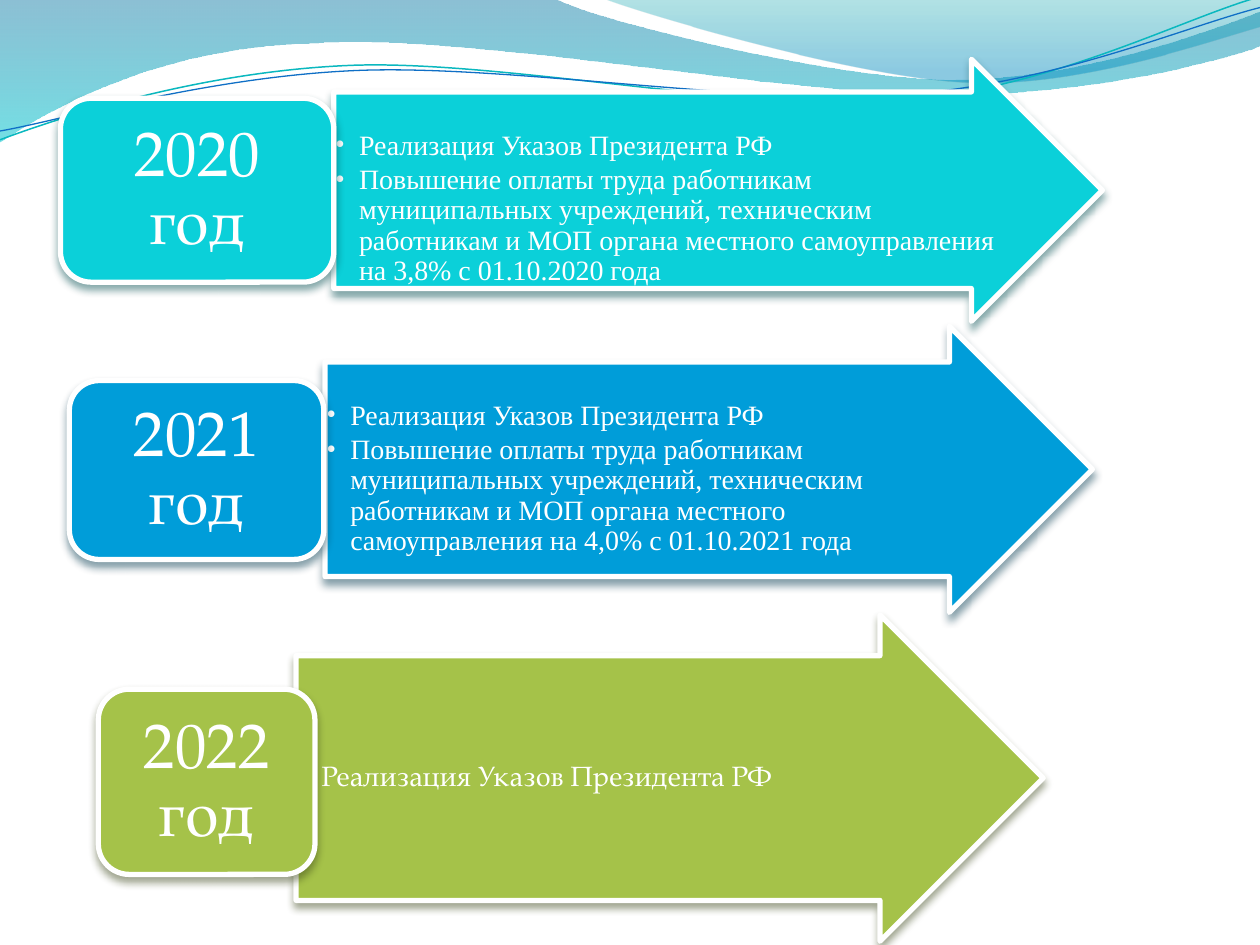
"""Build a slide with three yearly arrows under a wave header."""
from lxml.etree import SubElement
from pptx import Presentation
from pptx.dml.color import RGBColor
from pptx.enum.shapes import MSO_SHAPE as Preset
from pptx.enum.text import MSO_ANCHOR as Anchor, PP_ALIGN as Align
from pptx.oxml.ns import qn
from pptx.util import Inches, Pt

COLUMNS, ROWS = 100, 75
CELL = Inches(10) / COLUMNS
COLORS = {
    "white": "FFFFFF", "cyan": "0BD0D9", "blue": "009DD9", "green": "A5C249",
    "cyan_shade": "024B4E", "blue_shade": "00374C", "green_shade": "3A4519",
    "deep": "0074A1", "aqua": "00C6CF", "teal": "00A1A9", "sea": "008BBF",
    "thread_teal": "0AB8BF", "thread_blue": "0F6FC6",
}
SERIF, PAGELLA = "Times New Roman", "TeX Gyre Pagella"
DECREES = "Реализация Указов Президента РФ"
RAISE = ("Повышение оплаты труда работникам муниципальных учреждений, техническим "
         "работникам и МОП органа местного самоуправления на {} года")

BANDS = [
    ([(0, 0), (44, -0.1), (47.6, 1.7, 66.4, 6.3, 75.8, 6.3),
      (85.3, 6.3, 95.8, 2.6, 100, 0.9), (100.1, 3.6),
      (98.3, 4.4, 87, 7.6, 74.6, 7.5), (62.2, 7.5, 38.2, 2.8, 25.7, 3.4),
      (12.9, 3.6, 4.6, 8.3, -0.1, 11.3)],
     [(0, "deep", 45), (1, "aqua", 55)]),
    ([(47.9, -0.1), (50.9, 1.1, 68.2, 6.2, 76.9, 6.5),
      (85.6, 6.9, 96.1, 3.2, 100, 2.1), (100, 0)],
     [(0, "teal", 30), (0.8, "sea", 45)]),
]
THREADS = [
    ([(0, 11.1), (4.8, 9.3, 15.8, 5.7, 27.7, 5.2),
      (39.5, 4.7, 59.3, 8.9, 71.3, 8), (83.3, 7.1, 93.8, 1.5, 99.8, -0.2)],
     "thread_teal", 0.85),
    ([(0, 10.4), (4.7, 9.6, 16.4, 6.1, 28.3, 5.6),
      (40.3, 5.1, 59.7, 8.4, 71.7, 7.5), (83.6, 6.7, 94.1, 2.1, 100, 0.6)],
     "thread_blue", 0.75),
]
YEARS = [
    {"year": "2020 год", "color": "cyan", "font": SERIF, "lead": 1,
     "arrow": (26.5, 4.7, 61, 20.8), "badge": (4.8, 7.8, 21.7, 14.6),
     "measures": [DECREES, RAISE.format("3,8% с 01.10.2020")]},
    {"year": "2021 год", "color": "blue", "font": SERIF, "lead": 1,
     "arrow": (25.8, 25.9, 60.9, 22.7), "badge": (5.5, 30.2, 20.2, 14.2),
     "measures": [DECREES, RAISE.format("4,0% с 01.10.2021")]},
    {"year": "2022 год", "color": "green", "font": PAGELLA, "lead": 3,
     "arrow": (23.5, 48.8, 59.3, 25.9), "badge": (7.8, 54.7, 17.2, 14.7),
     "measures": [DECREES]},
]


def cells(*counts):
    """Turn grid counts into slide lengths."""
    return [round(count * CELL) for count in counts]


def rgb(name):
    """Look up a named colour."""
    return RGBColor.from_string(COLORS[name])


def apply(target, values):
    """Set each attribute named in values."""
    for name, value in values.items():
        setattr(target, name, value)


def bend(curve, segments):
    """Merge each curve's three straight steps into one cubic segment."""
    steps = iter(list(curve._element.iter(qn("a:lnTo"))))
    for segment in segments:
        first = next(steps)
        if len(segment) == 6:
            first.tag = qn("a:cubicBezTo")
            for step in (next(steps), next(steps)):
                first.append(step[0])
                step.getparent().remove(step)


def add_curve(slide, outline, close):
    """Add a freeform that follows the outline."""
    start, *segments = outline
    points = [cells(*segment[i:i + 2]) for segment in segments
              for i in range(0, len(segment), 2)]
    builder = slide.shapes.build_freeform(*cells(*start))
    builder.add_line_segments(points, close=close)
    curve = builder.convert_to_shape()
    bend(curve, segments)
    curve.shadow.inherit = False
    return curve


def add_band(slide, outline, stops):
    """Add a translucent wave with a downward gradient."""
    band = add_curve(slide, outline, True)
    band.line.fill.background()
    band.fill.gradient()
    band.fill.gradient_angle = 270
    for stop, (position, color, _) in zip(band.fill.gradient_stops, stops):
        stop.position = position
        stop.color.rgb = rgb(color)
    tints = list(band._element.spPr.iter(qn("a:srgbClr")))
    for tint, (_, _, opacity) in zip(tints, stops):
        SubElement(tint, qn("a:alpha"), val=str(opacity * 1000))


def add_thread(slide, outline, color, width):
    """Add a thin wavy line."""
    thread = add_curve(slide, outline, False)
    thread.fill.background()
    thread.line.color.rgb = rgb(color)
    thread.line.width = Pt(width)


def add_block(slide, preset, place, color, frame_format):
    """Add a white-edged block with a soft shadow."""
    block = slide.shapes.add_shape(preset, *cells(*place))
    block.fill.solid()
    block.fill.fore_color.rgb = rgb(color)
    block.line.color.rgb = rgb("white")
    block.line.width = Pt(3)
    block.shadow.inherit = False
    effects = block._element.spPr.find(qn("a:effectLst"))
    shade = SubElement(effects, qn("a:outerShdw"), blurRad=str(Pt(4.5)), dist=str(Pt(3)),
                       dir="5400000", rotWithShape="0")
    tint = SubElement(shade, qn("a:srgbClr"), val=COLORS[color + "_shade"])
    SubElement(tint, qn("a:alpha"), val="48000")
    apply(block.text_frame, {"word_wrap": True, **frame_format})
    return block


def write(paragraph, text, font, size, paragraph_format):
    """Write one white paragraph."""
    paragraph.text = text
    apply(paragraph, {"line_spacing": 0.9, **paragraph_format})
    apply(paragraph.runs[0].font, {"name": font, "size": Pt(size)})
    paragraph.runs[0].font.color.rgb = rgb("white")


def add_bullet(paragraph, font):
    """Give a paragraph a hanging bullet."""
    props = paragraph._p.get_or_add_pPr()
    props.set("marL", str(Inches(0.19)))
    props.set("indent", str(-Inches(0.19)))
    SubElement(props, qn("a:buFont"), typeface=font)
    SubElement(props, qn("a:buChar"), char="•")


def add_arrow(slide, place, color, measures, font, lead):
    """Add an arrow listing the measures of a year."""
    margin, top = cells(0.1, 0.4 + 2.7 * lead)
    arrow = add_block(slide, Preset.RIGHT_ARROW, place, color, {
        "vertical_anchor": Anchor.TOP, "margin_left": margin, "margin_top": top,
        "margin_right": margin, "margin_bottom": margin})
    arrow.adjustments[0], arrow.adjustments[1] = 0.75, 0.5
    frame = arrow.text_frame
    for index, measure in enumerate(measures):
        paragraph = frame.add_paragraph() if index else frame.paragraphs[0]
        write(paragraph, measure, font, 16,
              {"alignment": Align.LEFT, "space_after": Pt(2.4)})
        add_bullet(paragraph, font)


def add_badge(slide, place, color, year):
    """Add a rounded badge with the year."""
    side, edge = cells(1.5, 0.7)
    badge = add_block(slide, Preset.ROUNDED_RECTANGLE, place, color, {
        "vertical_anchor": Anchor.MIDDLE, "margin_left": side, "margin_right": side,
        "margin_top": edge, "margin_bottom": edge})
    write(badge.text_frame.paragraphs[0], year, PAGELLA, 36, {"alignment": Align.CENTER})


def main():
    """Build and save the slide."""
    deck = Presentation()
    deck.slide_width, deck.slide_height = cells(COLUMNS, ROWS)
    slide = deck.slides.add_slide(deck.slide_layouts[6])
    for band in BANDS:
        add_band(slide, *band)
    for thread in THREADS:
        add_thread(slide, *thread)
    for plan in YEARS:
        add_arrow(slide, plan["arrow"], plan["color"], plan["measures"],
                  plan["font"], plan["lead"])
        add_badge(slide, plan["badge"], plan["color"], plan["year"])
    deck.save("out.pptx")


if __name__ == "__main__":
    main()
